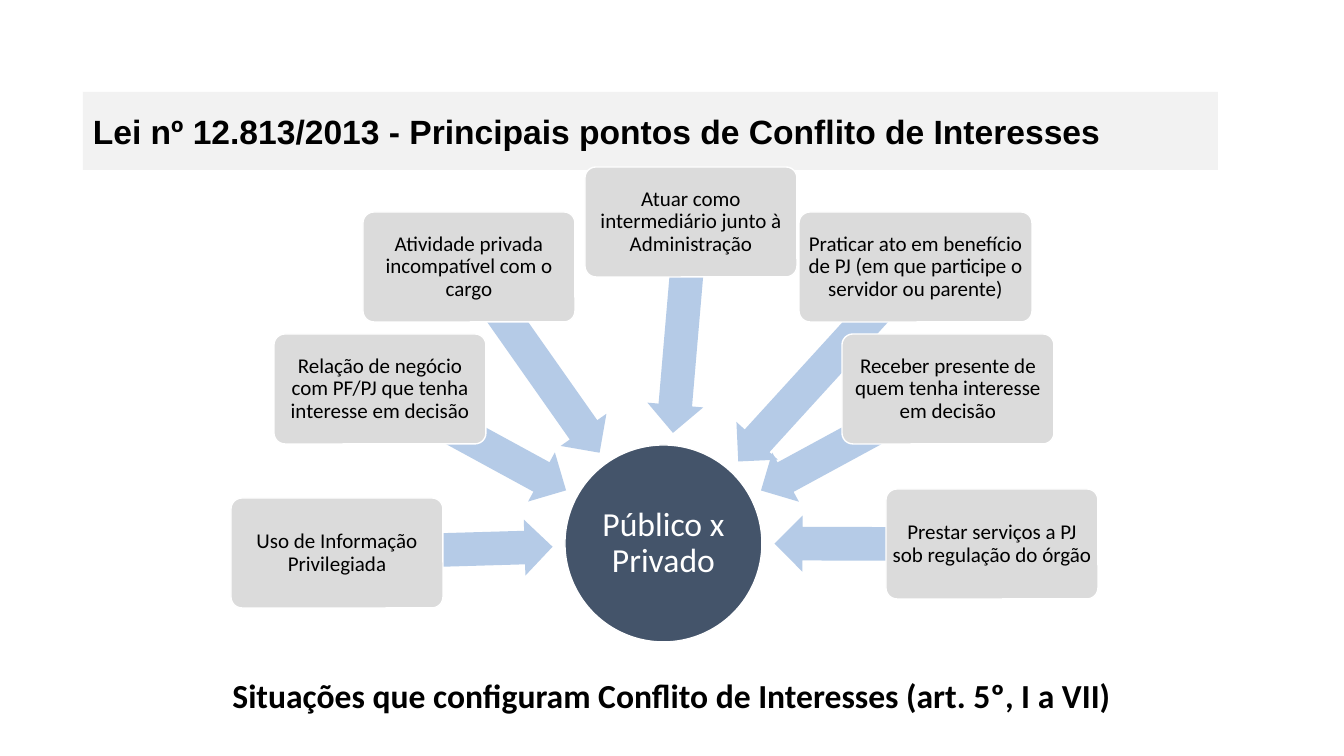
"""Builds the slide on conflicts of interest under Lei nº 12.813/2013."""
from math import atan2, cos, degrees, hypot, sin

from pptx import Presentation
from pptx.dml.color import RGBColor
from pptx.enum.shapes import MSO_SHAPE as Shape
from pptx.enum.text import MSO_ANCHOR as Anchor, PP_ALIGN as Align
from pptx.util import Emu, Pt

PX = 914400 / 100.8
HUB_LEFT, HUB_TOP, HUB_SIZE = 565, 445, 197
TIP_DISTANCE = 111
ARROW_HEIGHT = 56
LABEL_WIDTH, LABEL_HEIGHT = 212, 110
LABELS = [
    ("Uso de Informação Privilegiada", 231, 498, LABEL_WIDTH),
    ("Relação de negócio com PF/PJ que tenha interesse em decisão", 274, 334, LABEL_WIDTH),
    ("Atividade privada incompatível com o cargo", 363, 212, LABEL_WIDTH),
    ("Atuar como intermediário junto à Administração", 585, 167, LABEL_WIDTH),
    ("Praticar ato em benefício de PJ (em que participe o servidor ou parente)", 799, 212, 233),
    ("Receber presente de quem tenha interesse em decisão", 842, 334, LABEL_WIDTH),
    ("Prestar serviços a PJ sob regulação do órgão", 886, 489, LABEL_WIDTH),
]


def px(length):
    return Emu(round(length * PX))


def color(value):
    return RGBColor.from_string(value)


def set_all(target, values):
    for name, value in values.items():
        setattr(target, name, value)


def write(box, text, size, ink="000000", font="Calibri", bold=False,
          align=Align.CENTER, spacing=1.0, margin=None, anchor=Anchor.MIDDLE):
    frame = box.text_frame
    set_all(frame, {"word_wrap": True, "vertical_anchor": anchor})
    if margin is not None:
        sides = ("left", "top", "right", "bottom")
        set_all(frame, {f"margin_{side}": px(margin) for side in sides})
    para = frame.paragraphs[0]
    set_all(para, {"alignment": align, "line_spacing": spacing})
    span = para.add_run()
    span.text = text
    set_all(span.font, {"name": font, "size": Pt(size), "bold": bold})
    span.font.color.rgb = color(ink)


def add_figure(page, kind, left, top, width, height, fill, outlined=False):
    figure = page.shapes.add_shape(kind, px(left), px(top), px(width), px(height))
    figure.shadow.inherit = False
    figure.fill.solid()
    figure.fill.fore_color.rgb = color(fill)
    if outlined:
        figure.line.color.rgb = color("FFFFFF")
        figure.line.width = Pt(1)
    else:
        figure.line.fill.background()
    return figure


def add_title(page, text):
    band = add_figure(page, Shape.RECTANGLE, 83, 92, 1135, 78, "F2F2F2")
    write(band, text, 24, font="Arial", bold=True, align=Align.JUSTIFY)


def add_caption(page, text):
    box = page.shapes.add_textbox(px(148), px(670), px(1047), px(50))
    write(box, text, 24, bold=True, anchor=Anchor.TOP)


def add_hub(page, text):
    hub = add_figure(page, Shape.OVAL, HUB_LEFT, HUB_TOP, HUB_SIZE, HUB_SIZE, "44546A", True)
    write(hub, text, 24, ink="FFFFFF", spacing=0.9, margin=2)


def add_arrow(page, tail_x, tail_y):
    across = tail_x - HUB_LEFT - HUB_SIZE / 2
    down = tail_y - HUB_TOP - HUB_SIZE / 2
    angle = atan2(down, across)
    length = hypot(across, down) - TIP_DISTANCE
    middle_x = tail_x - cos(angle) * length / 2
    middle_y = tail_y - sin(angle) * length / 2
    arrow = add_figure(page, Shape.LEFT_ARROW, middle_x - length / 2,
                       middle_y - ARROW_HEIGHT / 2, length, ARROW_HEIGHT, "B5CBE7")
    arrow.adjustments[0] = 0.6
    arrow.adjustments[1] = 0.5
    arrow.rotation = degrees(angle) % 360


def add_label(page, text, left, top, width):
    label = add_figure(page, Shape.ROUNDED_RECTANGLE, left, top, width, LABEL_HEIGHT,
                       "DBDBDB", True)
    label.adjustments[0] = 0.1
    write(label, text, 15, spacing=0.9, margin=3)


def main():
    deck = Presentation()
    set_all(deck, {"slide_width": px(1344), "slide_height": px(756)})
    page = deck.slides.add_slide(deck.slide_layouts[6])
    add_title(page, "Lei nº 12.813/2013 - Principais pontos de Conflito de Interesses")
    add_caption(page, "Situações que configuram Conflito de Interesses (art. 5º, I a VII)")
    add_hub(page, "Público x Privado")
    for text, left, top, width in LABELS:
        add_arrow(page, left + width / 2, top + LABEL_HEIGHT / 2)
        add_label(page, text, left, top, width)
    deck.save("out.pptx")


if __name__ == "__main__":
    main()
